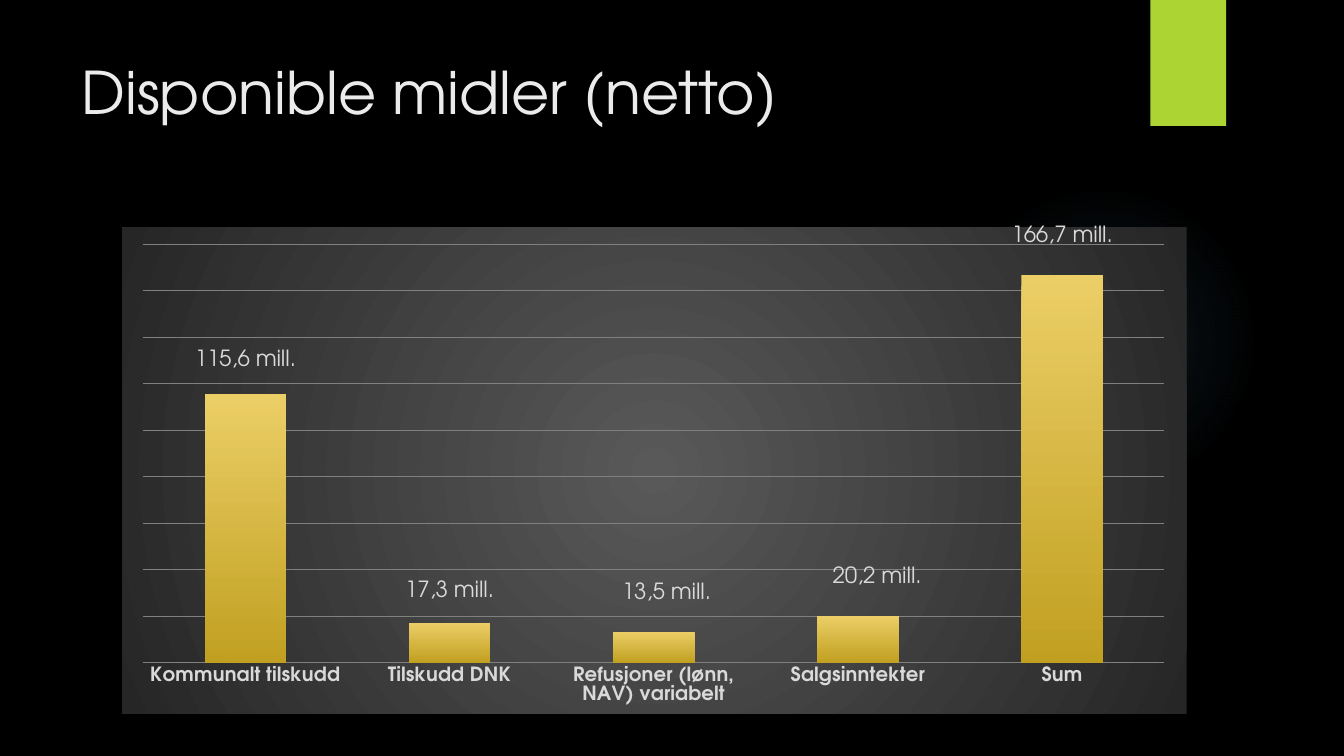
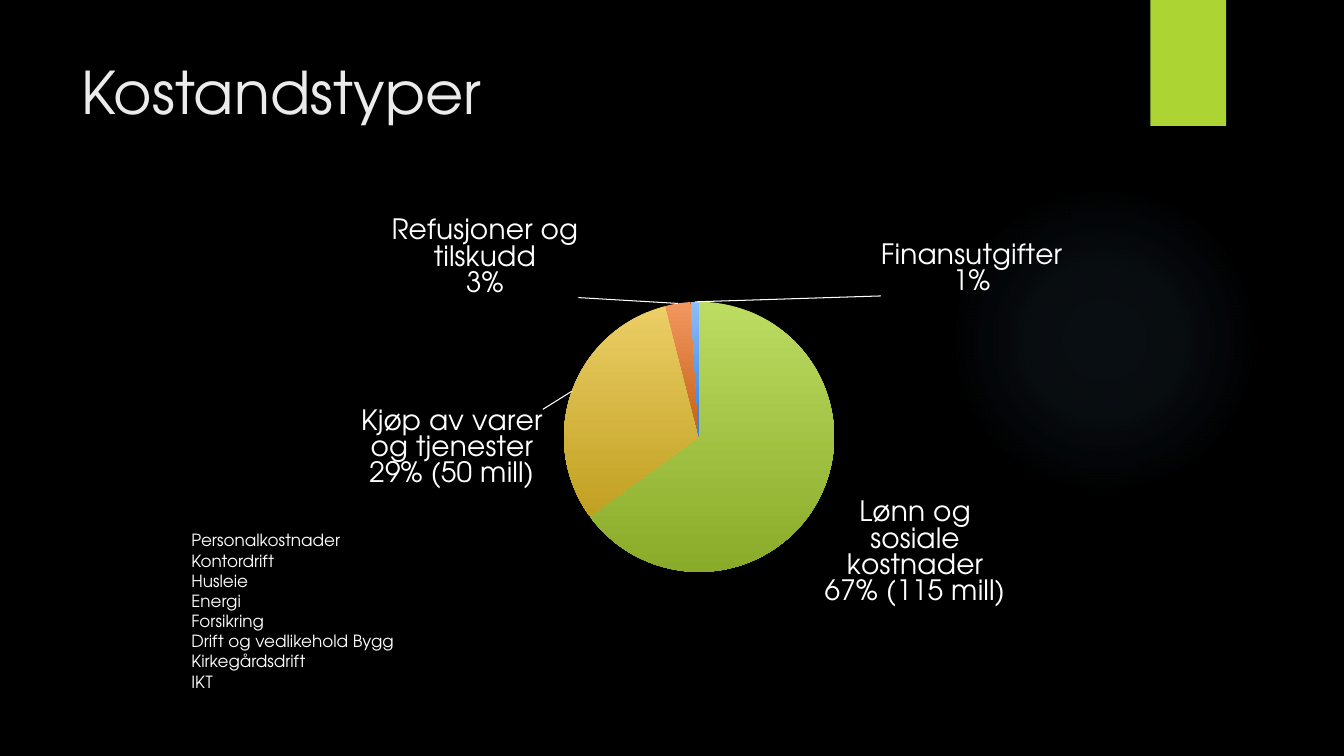
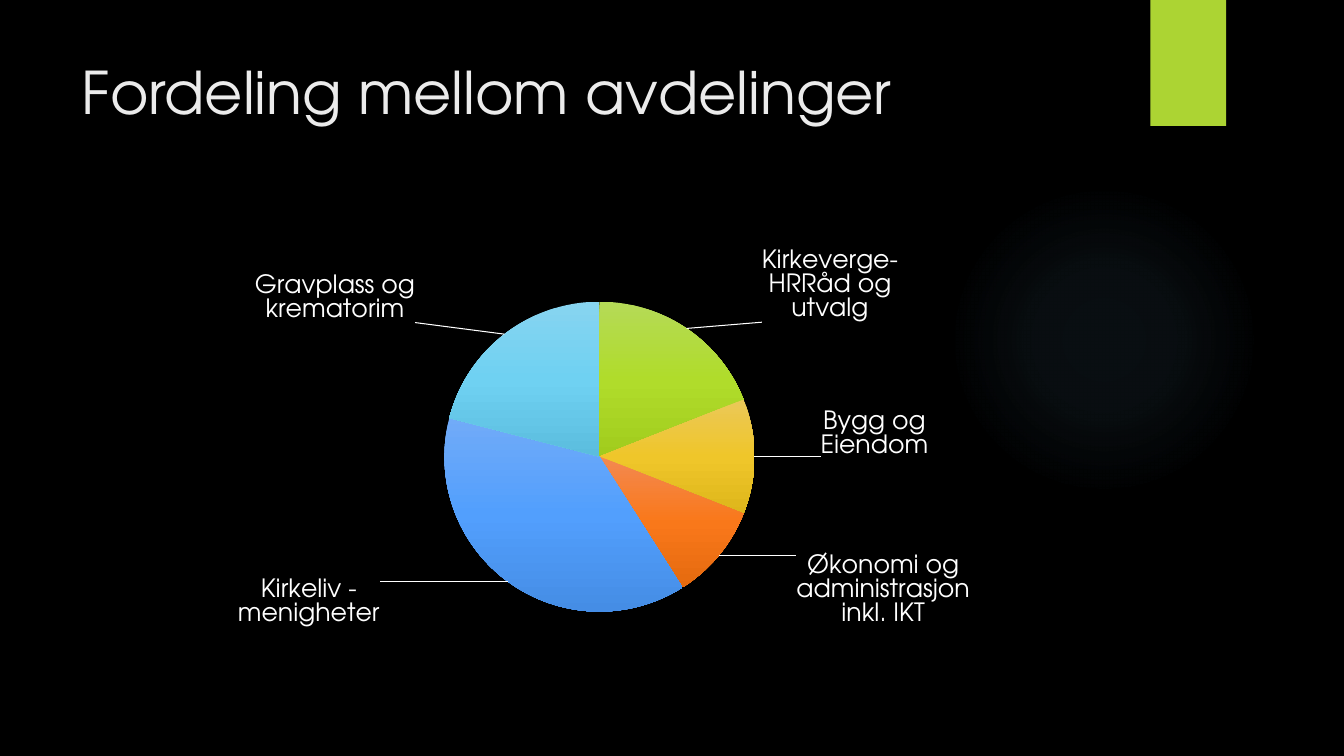
from copy import deepcopy

from pptx import Presentation
from pptx.chart.data import CategoryChartData
from pptx.dml.color import RGBColor
from pptx.dml.fill import FillFormat
from pptx.enum.chart import XL_CHART_TYPE, XL_LABEL_POSITION, XL_TICK_MARK
from pptx.enum.shapes import MSO_SHAPE
from pptx.oxml import parse_xml
from pptx.oxml.ns import nsdecls, qn
from pptx.util import Inches, Pt

FONT = "TeX Gyre Adventor"
BLACK = RGBColor(0x00, 0x00, 0x00)
WHITE = RGBColor(0xFF, 0xFF, 0xFF)
PALE = RGBColor(0xEB, 0xEB, 0xEB)
SILVER = RGBColor(0xD9, 0xD9, 0xD9)
GREY = RGBColor(0x80, 0x80, 0x80)
LIME = RGBColor(0xAC, 0xD4, 0x33)

# Gradient stops: share, colour, opacity in percent
GLOW = [(0, "7AC4F0", 7), (36, "7AC4F0", 6), (69, "7AC4F0", 0)]
PANEL = [(0, "595959", 100), (100, "262626", 100)]
GOLD = [(0, "EBCE66", 100), (100, "C1A021", 100)]
COSTS = [
    [(0, "BCDC62", 100), (100, "8AAA29", 100)],
    GOLD,
    [(0, "F2975F", 100), (100, "C56118", 100)],
    [(0, "8FBDF8", 100), (100, "287DE4", 100)],
]
UNITS = [
    [(0, first, 100), (50, middle, 100), (100, last, 100)]
    for first, middle, last in [
        ("B5DA57", "B0DC2B", "A1CC1D"),
        ("EBC858", "EFC62A", "DEB61B"),
        ("F38951", "F9781A", "E56A0F"),
        ("71ABF8", "529FFD", "458DE5"),
        ("87D4F0", "6FD1F2", "5BBDDE"),
    ]
]

WIDTH, HEIGHT = Inches(13.33), Inches(7.5)
# Left, top, width and height as percent of the slide
SHARES = {
    "glow": (70.6, 24.4, 23.1, 41.07),
    "band": (85.6, 0, 5.63, 16.67),
    "title": (5.33, 6.67, 77.2, 11.73),
    "funds": (9.08, 29.87, 79.22, 64.53),
    "costs": (13.5, 27.07, 73.37, 61.2),
    "units": (9.08, 29.87, 73.37, 61.2),
    "list": (13.5, 69.47, 16.95, 25.6),
}
AREAS = {
    name: [int(part * full / 100) for part, full in zip(box, (WIDTH, HEIGHT) * 2)]
    for name, box in SHARES.items()
}

# Points: category, value, amount on the label, label shift (x, y).
# Plot boxes and label shifts are percent of the chart.
SLIDES = [
    dict(
        title="Disponible midler (netto)", area="funds", pie=False,
        plot=(2, 3.5, 95.9, 86.1), size=16, color=SILVER, fills=[GOLD],
        points=[
            ("Kommunalt tilskudd", 115_600_000, "115,6 mill.", 0, -4),
            ("Tilskudd DNK", 17_300_000, "17,3 mill.", 0, -3.6),
            ("Refusjoner (lønn, NAV) variabelt", 13_500_000, "13,5 mill.", 1.2, -5),
            ("Salgsinntekter", 20_200_000, "20,2 mill.", 1.8, -5),
            ("Sum", 166_700_000, "166,7 mill.", 0, -5),
        ],
    ),
    dict(
        title="Kostandstyper", area="costs", pie=True,
        plot=(38.8, 21, 27.4, 58.4), size=20, color=WHITE, fills=COSTS,
        points=[
            ("Lønn og sosiale kostnader", 65, "67% (115 mill)", 0, 0),
            ("Kjøp av varer og tjenester", 31, "29% (50 mill)", -2.4, 21.4),
            ("Refusjoner og tilskudd", 3, "3%", -10, 0),
            ("Finansutgifter", 1, "1%", 28.1, 0),
        ],
    ),
    dict(
        title="Fordeling mellom avdelinger", area="units", pie=True,
        plot=(32.7, 16.4, 31.45, 67), size=18, color=WHITE, fills=UNITS,
        points=[
            ("Kirkeverge-HRRåd og utvalg", 19, "", 7.3, -0.3),
            ("Bygg og Eiendom", 12, "", 6.1, -4.8),
            ("Økonomi og administrasjon inkl. IKT", 10, "", 7.4, -1),
            ("Kirkeliv - menigheter", 38, "", -12.7, -1.7),
            ("Gravplass og krematorim", 21, "", -8.7, -1.5),
        ],
    ),
]
LIST = [
    "Personalkostnader", "Kontordrift", "Husleie", "Energi", "Forsikring",
    "Drift og vedlikehold Bygg", "Kirkegårdsdrift", "IKT",
]


def write(frame, text, size=12, color=WHITE):
    frame.text = text
    frame.word_wrap = True
    for line in frame.paragraphs:
        for run in line.runs:
            run.font.name = FONT
            run.font.size = Pt(size)
            run.font.color.rgb = color


def shade(fill, stops, round=False):
    """Give a fill a gradient, downward or from the centre out."""
    fill.solid()
    marks = "".join(
        f'<a:gs pos="{at * 1000}"><a:srgbClr val="{tone}">'
        f'<a:alpha val="{alpha * 1000}"/></a:srgbClr></a:gs>'
        for at, tone, alpha in stops
    )
    way = '<a:lin ang="5400000" scaled="0"/>'
    if round:
        way = ('<a:path path="circle"><a:fillToRect l="50000" t="50000" '
               'r="50000" b="50000"/></a:path>')
    props = fill._xPr
    props.replace(props.find(qn("a:solidFill")), parse_xml(
        f'<a:gradFill {nsdecls("a")} rotWithShape="1">'
        f"<a:gsLst>{marks}</a:gsLst>{way}</a:gradFill>"))


deck = Presentation()
deck.slide_width, deck.slide_height = WIDTH, HEIGHT
blank = deck.slide_layouts[6]
back = deck.slide_master.background.fill
back.solid()
back.fore_color.rgb = BLACK
pages = [deck.slides.add_slide(blank) for _ in SLIDES]

# The glow and the band belong to the layout
glow = pages[0].shapes.add_shape(MSO_SHAPE.OVAL, *AREAS["glow"])
shade(glow.fill, GLOW, round=True)
band = pages[0].shapes.add_shape(MSO_SHAPE.RECTANGLE, *AREAS["band"])
band.fill.solid()
band.fill.fore_color.rgb = LIME
for shape in (glow, band):
    shape.line.fill.background()
    shape.shadow.inherit = False
    blank.shapes._spTree.append(shape._element)

for page, item in zip(pages, SLIDES):
    title = page.shapes.add_textbox(*AREAS["title"])
    write(title.text_frame, item["title"], size=42, color=PALE)

    pie = item["pie"]
    names, values, *_ = zip(*item["points"])
    data = CategoryChartData()
    data.categories = names
    data.add_series(item["title"], values)
    kind = XL_CHART_TYPE.PIE if pie else XL_CHART_TYPE.COLUMN_CLUSTERED
    chart = page.shapes.add_chart(kind, *AREAS[item["area"]], data).chart
    chart.has_legend = chart.has_title = False
    chart.font.name = FONT
    chart.font.size = Pt(10)
    chart.font.color.rgb = WHITE
    plot = chart.plots[0]
    plot.vary_by_categories = pie
    series = plot.series[0]

    root = chart._chartSpace
    area = root.find(".//" + qn("c:plotArea"))
    clear = (f'<c:spPr {nsdecls("c", "a")}><a:noFill/>'
             "<a:ln><a:noFill/></a:ln></c:spPr>")
    area.append(parse_xml(clear))
    panel = parse_xml(clear)
    root.find(qn("c:txPr")).addprevious(panel)

    if not pie:
        shade(FillFormat.from_fill_parent(panel), PANEL, round=True)
        plot.gap_width = 150
        scale = chart.value_axis
        scale.minimum_scale, scale.maximum_scale = 0, 180_000_000
        scale.major_unit = 20_000_000
        scale.visible = False
        grid = scale.major_gridlines.format.line
        grid.color.rgb = GREY
        grid.width = Pt(0.75)
        axis = chart.category_axis
        axis.major_tick_mark = XL_TICK_MARK.NONE
        axis.format.line.fill.background()
        axis.tick_labels.font.name = FONT
        axis.tick_labels.font.size = Pt(14)
        axis.tick_labels.font.bold = True
        axis.tick_labels.font.color.rgb = SILVER

    parts = [series.points[i] for i in range(len(names))] if pie else [series]
    for part, stops in zip(parts, item["fills"]):
        shade(part.format.fill, stops)
        part.format.line.fill.background()

    labels = series.data_labels
    labels.show_value = True
    labels.position = XL_LABEL_POSITION.OUTSIDE_END
    labels.font.name = FONT
    labels.font.size = Pt(item["size"])
    labels.font.color.rgb = item["color"]
    group = labels._element
    style = group.find(qn("c:txPr"))
    style.find(qn("a:bodyPr")).set("wrap", "square")
    for lead in group.findall(qn("c:showLeaderLines")):
        group.remove(lead)
    group.append(parse_xml(f'<c:showLeaderLines {nsdecls("c")} val="{int(pie)}"/>'))
    if pie:
        group.append(parse_xml(
            f'<c:leaderLines {nsdecls("c", "a")}><c:spPr><a:ln w="9525"><a:solidFill>'
            f'<a:srgbClr val="{WHITE}"/></a:solidFill></a:ln></c:spPr></c:leaderLines>'))

    layouts = [(area, 0, item["plot"])]
    for i, (name, _, amount, *shift) in enumerate(item["points"]):
        label = series.points[i].data_label
        text = "\n".join(filter(None, (name, amount))) if pie else amount
        write(label.text_frame, text, size=item["size"], color=item["color"])
        label.position = XL_LABEL_POSITION.OUTSIDE_END
        mark = label._get_or_add_dLbl()
        # The leader line takes its colour from the label's own text style
        mark.find(qn("c:dLblPos")).addprevious(deepcopy(style))
        layouts.append((mark, 1, shift))

    for owner, index, box in layouts:
        for old in owner.findall(qn("c:layout")):
            owner.remove(old)
        modes = ""
        if owner is area:
            modes = ('<c:layoutTarget val="inner"/><c:xMode val="edge"/>'
                     '<c:yMode val="edge"/>')
        sides = "".join(f'<c:{side} val="{n / 100:.4f}"/>' for side, n in zip("xywh", box))
        owner.insert(index, parse_xml(
            f'<c:layout {nsdecls("c")}><c:manualLayout>{modes}{sides}'
            "</c:manualLayout></c:layout>"))

notes = pages[1].shapes.add_textbox(*AREAS["list"])
write(notes.text_frame, "\n".join(LIST))

deck.save("out.pptx")
